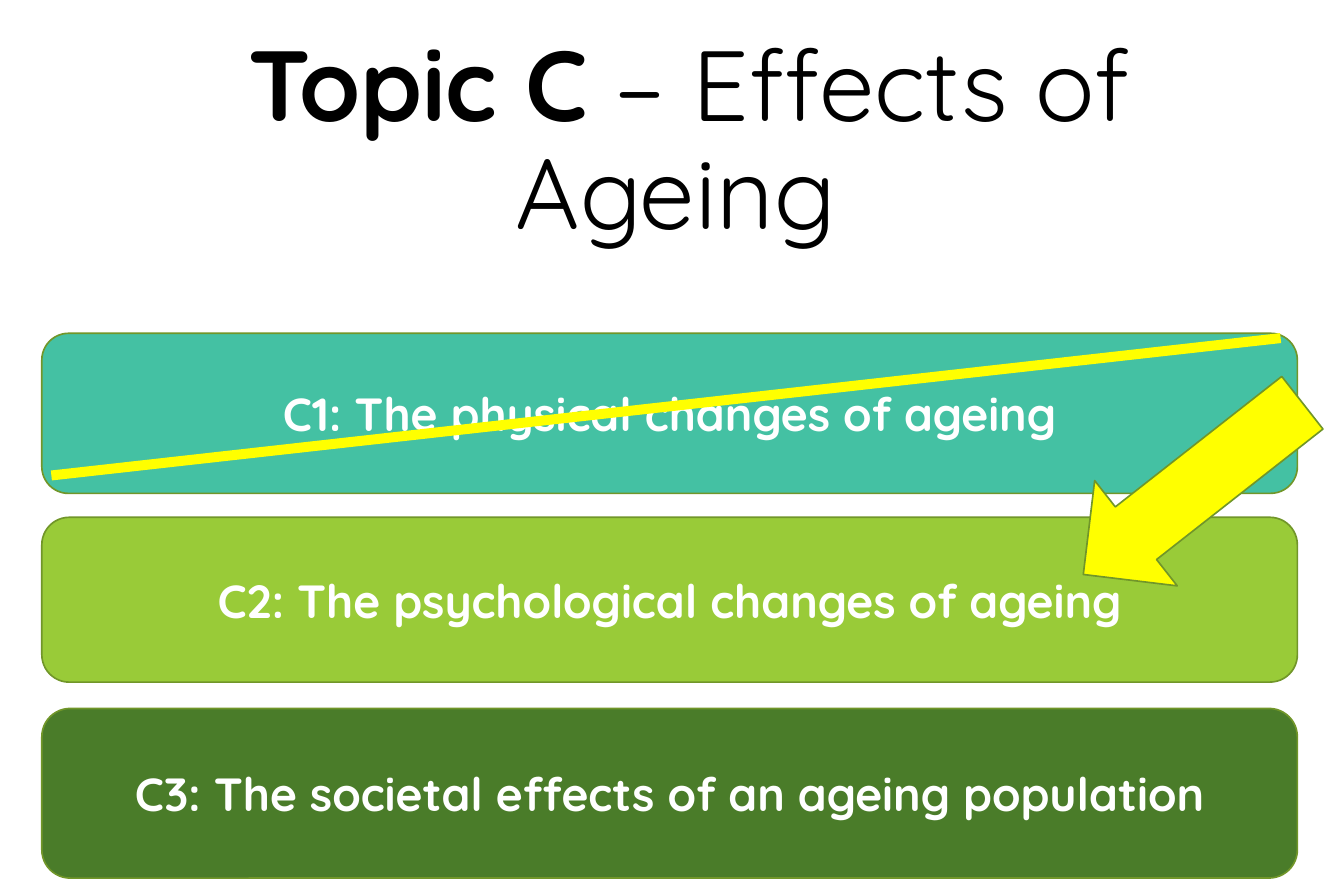
from pptx import Presentation
from pptx.dml.color import RGBColor
from pptx.enum.shapes import MSO_CONNECTOR, MSO_SHAPE
from pptx.enum.text import MSO_ANCHOR, MSO_AUTO_SIZE, PP_ALIGN
from pptx.oxml.ns import qn
from pptx.util import Inches, Pt
from lxml.etree import SubElement

FONT = "Quicksand"
COLOURS = {
    "title": "000000",
    "label": "FFFFFF",
    "outline": "719629",
    "highlight": "FFFF00",
    "physical": "44C1A3",
    "psychological": "99CB38",
    "societal": "4A7C29",
}
# Colour, top, height and label of each section
SECTIONS = [
    ("physical", 2.79, 1.34, "C1: The physical changes of ageing"),
    ("psychological", 4.33, 1.38, "C2: The psychological changes of ageing"),
    ("societal", 5.93, 1.42, "C3: The societal effects of an ageing population"),
]


def colour(name):
    return RGBColor.from_string(COLOURS[name])


def style_font(font, size, colour_name):
    font.name = FONT
    font.size = Pt(size)
    font.color.rgb = colour(colour_name)


def set_title(page):
    title = page.shapes.title
    title.left, title.top = Inches(0.95), Inches(0.89)
    title.width, title.height = Inches(9.64), Inches(1.26)
    frame = title.text_frame
    frame.word_wrap = True
    frame.auto_size = MSO_AUTO_SIZE.NONE
    frame.vertical_anchor = MSO_ANCHOR.BOTTOM
    para = frame.paragraphs[0]
    para.alignment = PP_ALIGN.CENTER
    para.line_spacing = 0.9
    for text, bold in (("Topic C", True), (" – Effects of Ageing ", False)):
        span = para.add_run()
        span.text = text
        style_font(span.font, 60, "title")
        span.font.bold = bold


def add_block(page, kind, left, top, width, height, fill):
    block = page.shapes.add_shape(
        kind, Inches(left), Inches(top), Inches(width), Inches(height))
    block.shadow.inherit = False
    block.fill.solid()
    block.fill.fore_color.rgb = colour(fill)
    block.line.color.rgb = colour("outline")
    block.line.width = Pt(1)
    return block


def add_section(page, fill, top, height, label):
    box = add_block(page, MSO_SHAPE.ROUNDED_RECTANGLE, 0.35, top, 10.51, height, fill)
    frame = box.text_frame
    frame.word_wrap = True
    frame.vertical_anchor = MSO_ANCHOR.MIDDLE
    para = frame.paragraphs[0]
    para.text = label
    para.alignment = PP_ALIGN.CENTER
    style_font(para.font, 28, "label")
    para.font.bold = True


def add_strike(page):
    strike = page.shapes.add_connector(
        MSO_CONNECTOR.STRAIGHT,
        Inches(0.43), Inches(3.98), Inches(10.72), Inches(2.83))
    strike.line.color.rgb = colour("highlight")
    strike.line.width = Pt(6)
    SubElement(strike._element.spPr, qn("a:effectLst"))


def main():
    deck = Presentation()
    deck.slide_width, deck.slide_height = Inches(11.25), Inches(7.5)
    page = deck.slides.add_slide(deck.slide_layouts[5])  # title only

    set_title(page)
    for section in SECTIONS:
        add_section(page, *section)

    # Arrow to the current section, line through the finished one
    arrow = add_block(page, MSO_SHAPE.LEFT_ARROW, 8.82, 3.53, 2.33, 1.12, "highlight")
    arrow.rotation = 321.9
    add_strike(page)

    deck.save("out.pptx")


if __name__ == "__main__":
    main()
